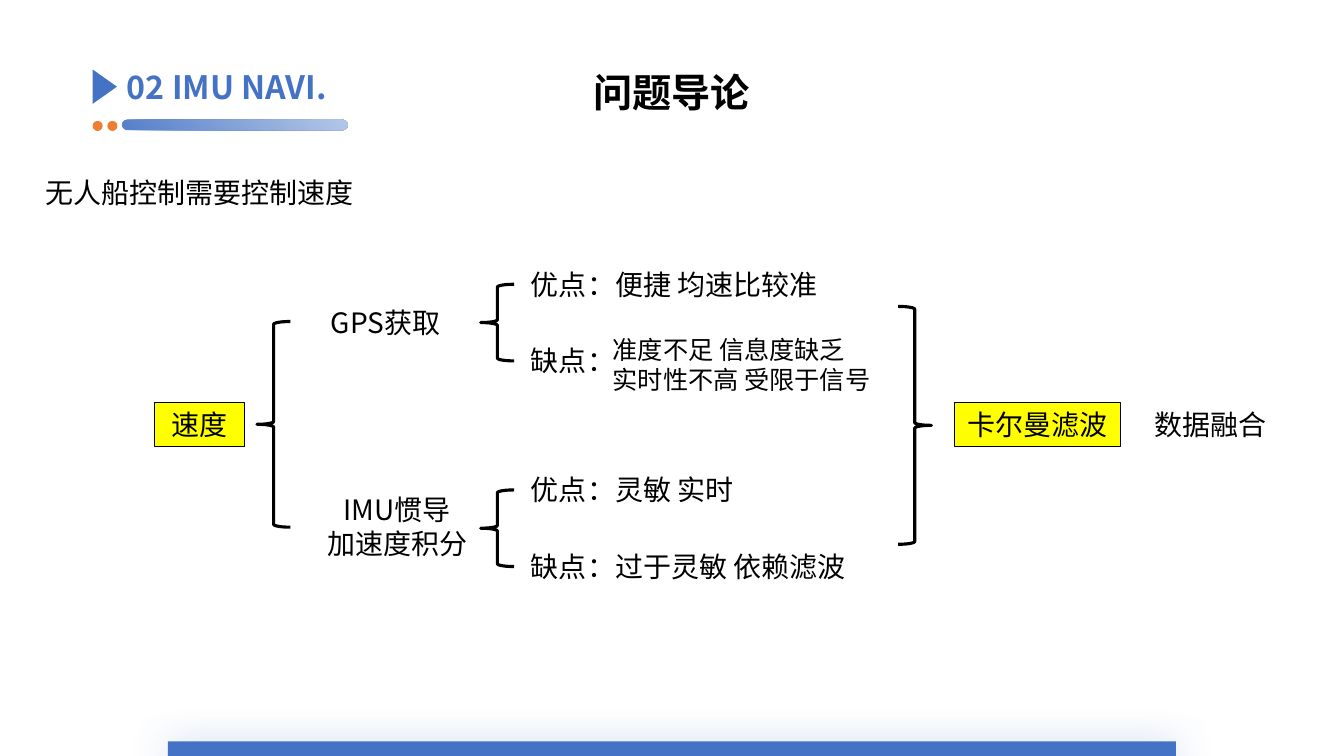
from lxml.etree import SubElement
from pptx import Presentation
from pptx.dml.color import RGBColor
from pptx.enum.shapes import MSO_SHAPE as Shape
from pptx.enum.text import MSO_ANCHOR as Anchor, MSO_AUTO_SIZE as AutoSize, PP_ALIGN as Align
from pptx.oxml.ns import qn
from pptx.util import Pt

FONT = "Noto Sans CJK SC"
COLORS = {
    "black": "000000", "blue": "4472C4", "orange": "ED7D31", "yellow": "FFFF00",
    "bar_start": "557FC9", "bar_end": "B4C7E7",
}
LEFT, CENTER = Align.LEFT, Align.CENTER

# lines, (left, top, width, height), size, alignment
TEXTS = [
    (["无人船控制需要控制速度"], (19.4, 121.7, 246.2, 31.5), 20, CENTER),
    (["GPS获取"], (225.4, 214.6, 100, 31.5), 20, CENTER),
    (["IMU惯导", "加速度积分"], (216, 348.5, 135.4, 55.7), 20, CENTER),
    (["准度不足 信息度缺乏", "实时性不高 受限于信号"], (430.6, 235.4, 201.6, 50.9), 18, LEFT),
    (["数据融合"], (815, 287.3, 100, 31.5), 20, CENTER),
]

# top of the first line, (advantage, drawback)
BRANCHES = [
    (187.2, ("优点：便捷 均速比较准", "缺点：")),
    (334.1, ("优点：灵敏 实时", "缺点：过于灵敏 依赖滤波")),
]
BRANCH_LEFT, BRANCH_WIDTH, BRANCH_STEP, LINE_HEIGHT = 372.2, 300, 54.7, 31.5

HIGHLIGHTS = [
    ("速度", (110.2, 287.3, 64.8, 31.5)),
    ("卡尔曼滤波", (681.8, 287.3, 118.8, 31.5)),
]
BRACE_WIDTH = 23.8
BRACES = [
    (Shape.LEFT_BRACE, (183.6, 229.7, BRACE_WIDTH, 146.9)),
    (Shape.RIGHT_BRACE, (641.5, 218.9, BRACE_WIDTH, 169.9)),
]
BRACES += [
    (Shape.LEFT_BRACE, (343.4, top + 15.9, BRACE_WIDTH, BRANCH_STEP))
    for top, _ in BRANCHES
]


def rgb(name):
    return RGBColor.from_string(COLORS[name])


def add_shape(page, kind, frame, fill=None, line=None, line_width=0.75):
    shape = page.shapes.add_shape(kind, *map(Pt, frame))
    shape.shadow.inherit = False
    if fill:
        shape.fill.solid()
        shape.fill.fore_color.rgb = rgb(fill)
    else:
        shape.fill.background()
    if line:
        shape.line.color.rgb = rgb(line)
        shape.line.width = Pt(line_width)
    else:
        shape.line.fill.background()
    return shape


def write(shape, lines, size, align=LEFT, color="black", bold=False):
    frame = shape.text_frame
    frame.word_wrap = True
    frame.text = "\n".join(lines)
    for para in frame.paragraphs:
        para.alignment = align
        font = para.font
        font.size, font.bold, font.name = Pt(size), bold, FONT
        font.color.rgb = rgb(color)
        defaults = para._p.pPr.find(qn("a:defRPr"))
        SubElement(defaults, qn("a:ea"), typeface=FONT)


def add_text(page, lines, frame, size, align=LEFT, **style):
    box = page.shapes.add_textbox(*map(Pt, frame))
    write(box, lines, size, align, **style)
    box.text_frame.auto_size = AutoSize.SHAPE_TO_FIT_TEXT
    return box


def add_glow(shape, color, opacity, blur, distance):
    """Give the shape a soft shadow that falls straight down."""
    effects = shape._element.spPr.find(qn("a:effectLst"))
    shadow = SubElement(
        effects, qn("a:outerShdw"), blurRad=str(Pt(blur)), dist=str(Pt(distance)),
        dir="5400000", algn="t", rotWithShape="0")
    tint = SubElement(shadow, qn("a:srgbClr"), val=COLORS[color])
    SubElement(tint, qn("a:alpha"), val=str(opacity * 1000))


def add_header(page):
    add_text(page, ["问题导论"], (269.3, 45.4, 420.5, 41), 28, CENTER, bold=True)
    marker = add_shape(page, Shape.ISOSCELES_TRIANGLE, (62.6, 53.3, 24.5, 17.3), "blue")
    marker.rotation = 90
    section = add_text(page, ["02 IMU NAVI."], (83.5, 38.2, 260.6, 46.8), 23,
                       color="blue", bold=True)
    section.text_frame.auto_size = AutoSize.NONE
    section.text_frame.vertical_anchor = Anchor.MIDDLE
    for left in (66.2, 76.7):
        add_shape(page, Shape.OVAL, (left, 86.4, 7.2, 7.2), "orange")
    underline = add_shape(page, Shape.ROUNDED_RECTANGLE, (87.1, 85.5, 161.3, 7.5))
    underline.adjustments[0] = 0.5
    underline.fill.gradient()
    underline.fill.gradient_angle = 45
    for stop, name, position in zip(underline.fill.gradient_stops,
                                    ("bar_start", "bar_end"), (0, 1)):
        stop.color.rgb = rgb(name)
        stop.position = position


def add_diagram(page):
    for lines, frame, size, align in TEXTS:
        add_text(page, lines, frame, size, align)
    for top, points in BRANCHES:
        for row, point in enumerate(points):
            frame = (BRANCH_LEFT, top + row * BRANCH_STEP, BRANCH_WIDTH, LINE_HEIGHT)
            add_text(page, [point], frame, 20)
    for kind, frame in BRACES:
        add_shape(page, kind, frame, line="black", line_width=2.25)
    for label, frame in HIGHLIGHTS:
        box = add_shape(page, Shape.RECTANGLE, frame, "yellow", "black")
        write(box, [label], 20, CENTER)


def main():
    deck = Presentation()
    deck.slide_width, deck.slide_height = Pt(960), Pt(540)
    page = deck.slides.add_slide(deck.slide_layouts[6])
    footer = add_shape(page, Shape.RECTANGLE, (120, 529.5, 720, 10.5), "blue")
    add_glow(footer, "blue", opacity=40, blur=28, distance=3)
    add_header(page)
    add_diagram(page)
    deck.save("out.pptx")


if __name__ == "__main__":
    main()
